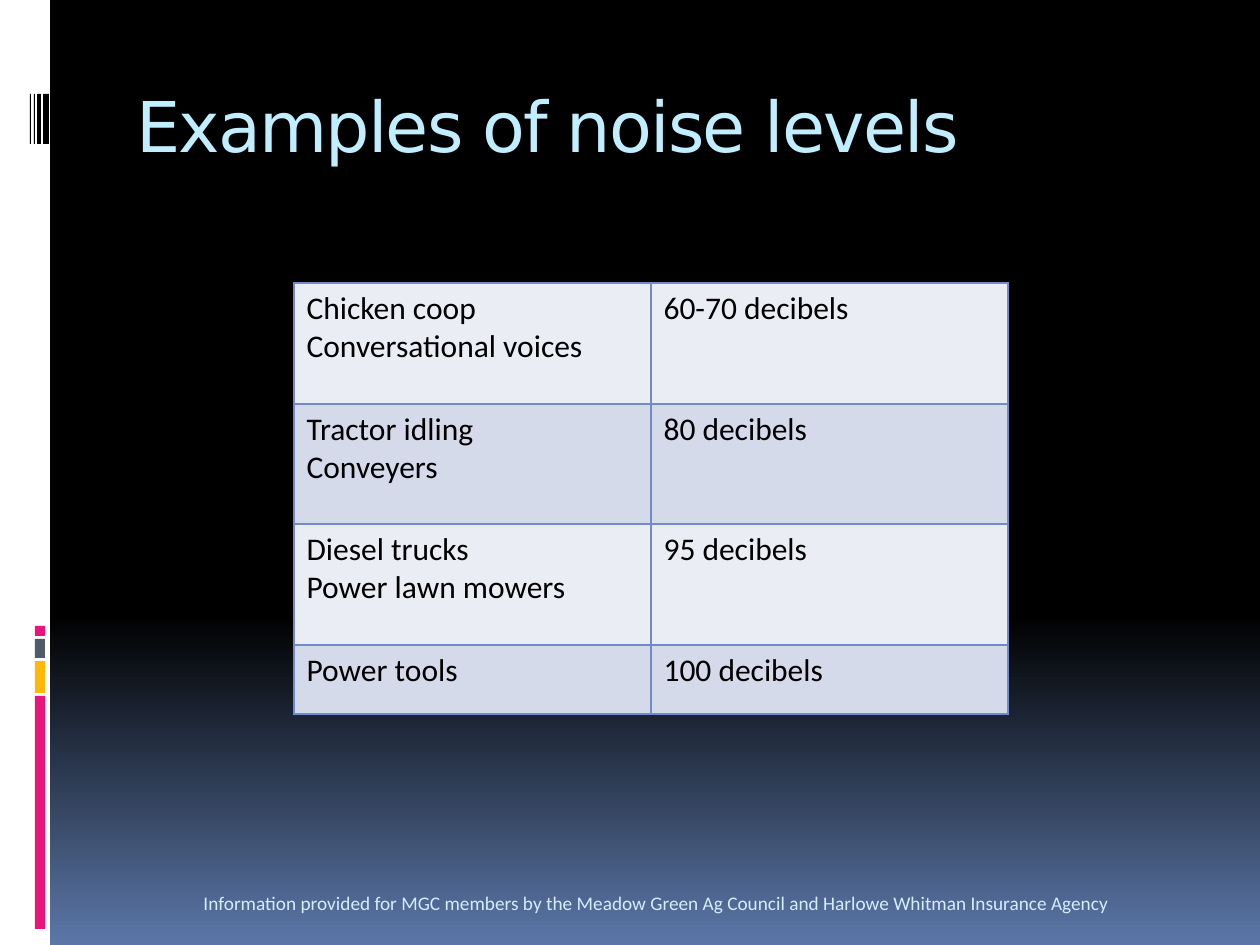
from dataclasses import dataclass

from lxml.etree import SubElement
from pptx import Presentation
from pptx.dml.color import RGBColor
from pptx.enum.shapes import MSO_SHAPE
from pptx.enum.text import MSO_ANCHOR, PP_ALIGN
from pptx.oxml import parse_xml
from pptx.oxml.ns import nsdecls, qn
from pptx.util import Emu, Pt

PX_PER_INCH = 126


def px(length):
    return Emu(round(length * 914400 / PX_PER_INCH))


@dataclass(frozen=True)
class Theme:
    black: str = "000000"
    white: str = "FFFFFF"
    pink: str = "EA157A"
    amber: str = "FEB80A"
    slate: str = "4E5B6F"
    glow: str = "5B77A8"
    title: str = "C1EEFF"
    footer: str = "D6ECFF"
    border: str = "738AC8"
    bands: tuple = ("EBEDF5", "D5DAEB")
    title_font: str = "DejaVu Sans"
    body_font: str = "Calibri"
    title_size: int = 40
    table_size: int = 18
    footer_size: int = 11


class SlideBuilder:
    def __init__(self, page, theme):
        self.page = page
        self.theme = theme

    def set_font(self, para, name, size, color):
        para.font.name = name
        para.font.size = Pt(size)
        para.font.color.rgb = RGBColor.from_string(color)

    def background(self):
        fill = self.page.background.fill
        fill.gradient()
        fill.gradient_angle = 270
        stops = ((0.65, self.theme.black), (1, self.theme.glow))
        for stop, (position, color) in zip(fill.gradient_stops, stops):
            stop.position = position
            stop.color.rgb = RGBColor.from_string(color)

    def block(self, left, top, width, height, color):
        box = self.page.shapes.add_shape(
            MSO_SHAPE.RECTANGLE, px(left), px(top), px(width), px(height))
        box.shadow.inherit = False
        box.fill.solid()
        box.fill.fore_color.rgb = RGBColor.from_string(color)
        box.line.fill.background()

    def title(self, text, left, top, width, height):
        box = self.page.shapes.title
        box.left, box.top, box.width, box.height = map(px, (left, top, width, height))
        frame = box.text_frame
        frame.text = text
        frame.vertical_anchor = MSO_ANCHOR.TOP
        frame.margin_left, frame.margin_top = px(10), px(13)
        para = frame.paragraphs[0]
        para.alignment = PP_ALIGN.LEFT
        self.set_font(para, self.theme.title_font, self.theme.title_size, self.theme.title)
        para.runs[0].font._element.set("spc", "-100")

    def footer(self, text, left, top, width, height):
        box = self.page.shapes.add_textbox(px(left), px(top), px(width), px(height))
        frame = box.text_frame
        frame.word_wrap = True
        frame.vertical_anchor = MSO_ANCHOR.BOTTOM
        frame.text = text
        para = frame.paragraphs[0]
        para.alignment = PP_ALIGN.CENTER
        self.set_font(para, self.theme.body_font, self.theme.footer_size, self.theme.footer)

    def cell_borders(self, cell):
        properties = cell._tc.get_or_add_tcPr()
        for index, side in enumerate(("lnL", "lnR", "lnT", "lnB")):
            line = parse_xml(f'<a:{side} {nsdecls("a")} w="{Pt(1)}"/>')
            fill = SubElement(line, qn("a:solidFill"))
            SubElement(fill, qn("a:srgbClr"), val=self.theme.border)
            properties.insert(index, line)

    def table(self, rows, left, top, column_width, row_heights):
        columns = len(rows[0])
        table = self.page.shapes.add_table(
            len(rows), columns, px(left), px(top),
            px(column_width * columns), px(sum(row_heights))).table
        table.first_row = table.horz_banding = False
        for column in table.columns:
            column.width = px(column_width)
        for index, (texts, height) in enumerate(zip(rows, row_heights)):
            table.rows[index].height = px(height)
            band = self.theme.bands[index % len(self.theme.bands)]
            for cell, text in zip(table.rows[index].cells, texts):
                cell.text = text
                cell.fill.solid()
                cell.fill.fore_color.rgb = RGBColor.from_string(band)
                self.cell_borders(cell)
                for para in cell.text_frame.paragraphs:
                    self.set_font(para, self.theme.body_font,
                                  self.theme.table_size, self.theme.black)


def main():
    deck = Presentation()
    deck.slide_width, deck.slide_height = px(1260), px(945)
    theme = Theme()
    slide = SlideBuilder(deck.slides.add_slide(deck.slide_layouts[5]), theme)

    slide.background()
    slide.block(0, 0, 50, 945, theme.white)
    for top, height, color in (
        (696, 233, theme.pink),
        (661, 32, theme.amber),
        (639, 19, theme.slate),
        (626, 10, theme.pink),
    ):
        slide.block(35, top, 10, height, color)
    for left, width in ((43, 6), (37, 4), (34, 1), (30, 1)):
        slide.block(left, 94, width, 50, theme.black)

    slide.title("Examples of noise levels", 126, 70, 1071, 126)
    noise_levels = (
        ("Chicken coop\nConversational voices", "60-70 decibels"),
        ("Tractor idling\nConveyers", "80 decibels"),
        ("Diesel trucks\nPower lawn mowers", "95 decibels"),
        ("Power tools", "100 decibels"),
    )
    slide.table(noise_levels, 294, 283, 357, (121, 120, 121, 69))
    slide.footer(
        "Information provided for MGC members by the Meadow Green Ag Council "
        "and Harlowe Whitman Insurance Agency", 53, 861, 1207, 60)
    deck.save("out.pptx")


if __name__ == "__main__":
    main()
